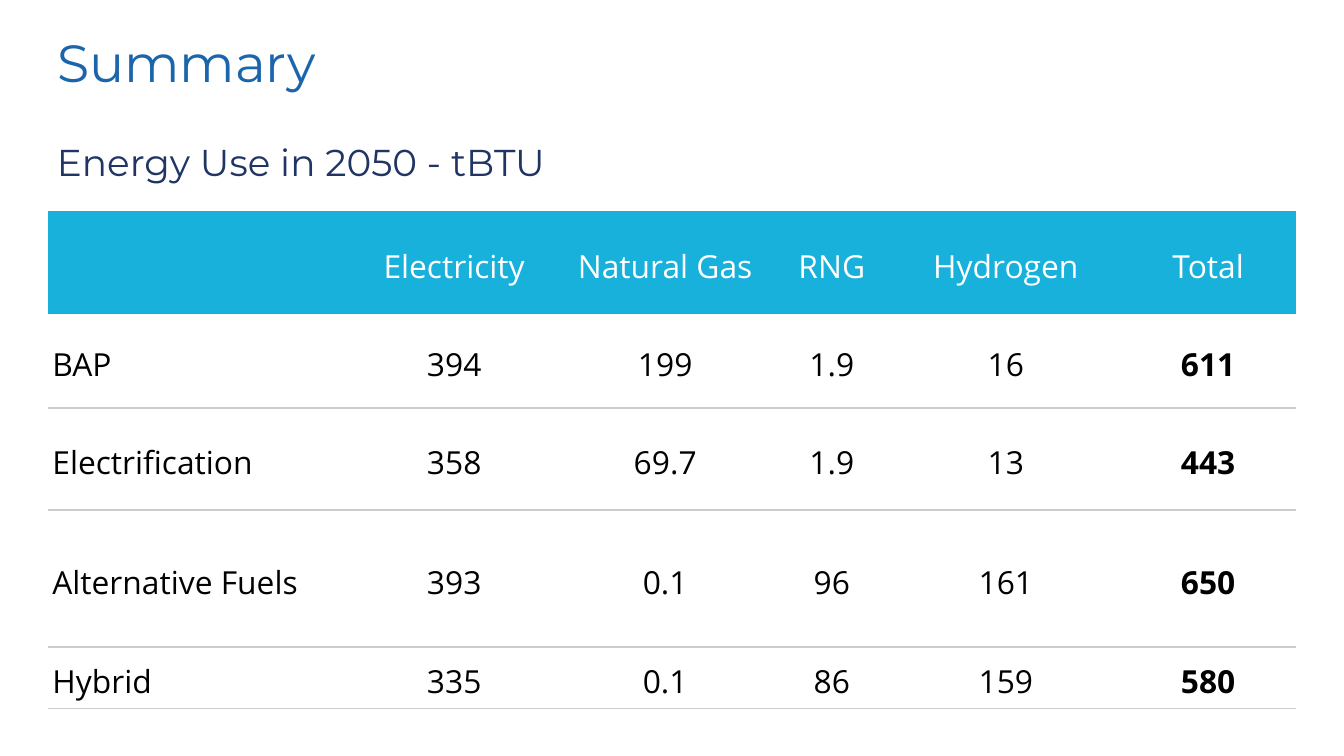
from lxml import etree
from pptx import Presentation
from pptx.dml.color import RGBColor
from pptx.enum.text import MSO_ANCHOR, MSO_AUTO_SIZE, PP_ALIGN
from pptx.oxml.ns import qn
from pptx.util import Pt

PX = 4572  # EMU per px, 200 px to the inch
TOP, MIDDLE = MSO_ANCHOR.TOP, MSO_ANCHOR.MIDDLE
LEFT, CENTER = PP_ALIGN.LEFT, PP_ALIGN.CENTER
NO_AUTOFIT = MSO_AUTO_SIZE.NONE

BLUE = RGBColor(0x1B, 0x65, 0xAC)
NAVY = RGBColor(0x20, 0x35, 0x64)
CYAN = RGBColor(0x17, 0xB1, 0xDC)
GRAY = RGBColor(0xCC, 0xCC, 0xCC)
WHITE = RGBColor(0xFF, 0xFF, 0xFF)
BLACK = RGBColor(0, 0, 0)

HEADING_FONT, TABLE_FONT = "Montserrat", "Open Sans"
COLUMN_WIDTHS = [449, 310, 318, 178, 340, 262]
ROW_HEIGHTS = [152, 140, 152, 204, 92]
ENERGY_USE = [
    ["", "Electricity", "Natural Gas", "RNG", "Hydrogen", "Total"],
    ["BAP", "394", "199", "1.9", "16", "611"],
    ["Electrification", "358", "69.7", "1.9", "13", "443"],
    ["Alternative Fuels", "393", "0.1", "96", "161", "650"],
    ["Hybrid", "335", "0.1", "86", "159", "580"],
]


def px(value):
    return value * PX


def set_all(target, values):
    for name, value in values.items():
        setattr(target, name, value)


def margins(horizontal, vertical):
    return {
        "margin_left": px(horizontal), "margin_right": px(horizontal),
        "margin_top": px(vertical), "margin_bottom": px(vertical),
    }


def write(paragraph, text, color, alignment, **font):
    paragraph.alignment = alignment
    run = paragraph.add_run()
    run.text = text
    set_all(run.font, font)
    run.font.color.rgb = color


def add_heading(shape, box, text, size, color):
    """Place a heading in its box (left, top, width, height)."""
    set_all(shape, dict(zip(("left", "top", "width", "height"), map(px, box))))
    frame = shape.text_frame
    set_all(frame, {"word_wrap": True, "auto_size": NO_AUTOFIT,
                    "vertical_anchor": TOP, **margins(20, 20)})
    write(frame.paragraphs[0], text, color, LEFT, name=HEADING_FONT, size=Pt(size))


def set_borders(cell, top_color, bottom_color):
    """Draw the top and bottom edges of a cell and clear its sides."""
    properties = cell._tc.get_or_add_tcPr()
    edges = {"lnL": None, "lnR": None, "lnT": top_color, "lnB": bottom_color}
    for index, (edge, color) in enumerate(edges.items()):
        line = etree.Element(qn(f"a:{edge}"), w=str(Pt(0.75)))
        if color is None:
            etree.SubElement(line, qn("a:noFill"))
        else:
            fill = etree.SubElement(line, qn("a:solidFill"))
            etree.SubElement(fill, qn("a:srgbClr"), val=str(color))
        properties.insert(index, line)


def format_cell(cell, text, row, column):
    header = row == 0
    set_all(cell, {"vertical_anchor": MIDDLE, **margins(6, 4)})
    if header:
        cell.fill.solid()
        cell.fill.fore_color.rgb = CYAN
    else:
        cell.fill.background()
    set_borders(cell, CYAN if row <= 1 else GRAY, CYAN if header else GRAY)
    if text:
        paragraph = cell.text_frame.paragraphs[0]
        paragraph.line_spacing = 1.15
        total = column == len(COLUMN_WIDTHS) - 1
        write(paragraph, text, WHITE if header else BLACK,
              CENTER if column else LEFT, name=TABLE_FONT, size=Pt(17),
              bold=total and not header)


def add_energy_table(slide, left, top):
    """Place the energy use table with its corner at left, top."""
    table = slide.shapes.add_table(
        len(ROW_HEIGHTS), len(COLUMN_WIDTHS), px(left), px(top),
        px(sum(COLUMN_WIDTHS)), px(sum(ROW_HEIGHTS))).table
    set_all(table, {"first_row": False, "horz_banding": False})
    for column, width in zip(table.columns, COLUMN_WIDTHS):
        column.width = px(width)
    for row, height in zip(table.rows, ROW_HEIGHTS):
        row.height = px(height)
    for row, texts in enumerate(ENERGY_USE):
        for column, text in enumerate(texts):
            format_cell(table.cell(row, column), text, row, column)


def main():
    presentation = Presentation()
    set_all(presentation, {"slide_width": px(2000), "slide_height": px(1125)})
    slide = presentation.slides.add_slide(presentation.slide_layouts[5])

    # Title, table and table heading
    add_heading(slide.shapes.title, (65, 25, 1828, 126), "Summary", 28, BLUE)
    add_energy_table(slide, 72, 315)
    add_heading(slide.shapes.add_textbox(0, 0, 0, 0), (65, 187, 814, 108),
                "Energy Use in 2050 - tBTU", 20, NAVY)

    presentation.save("out.pptx")


if __name__ == "__main__":
    main()
